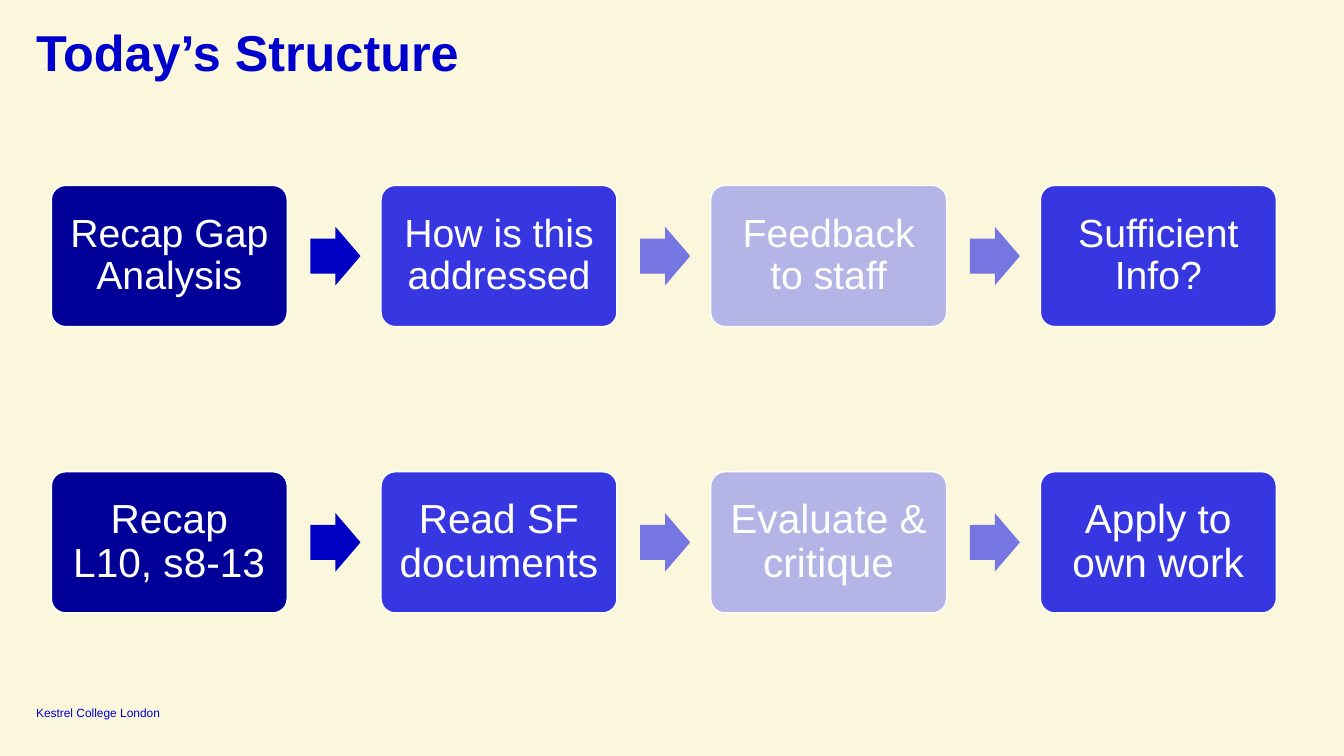
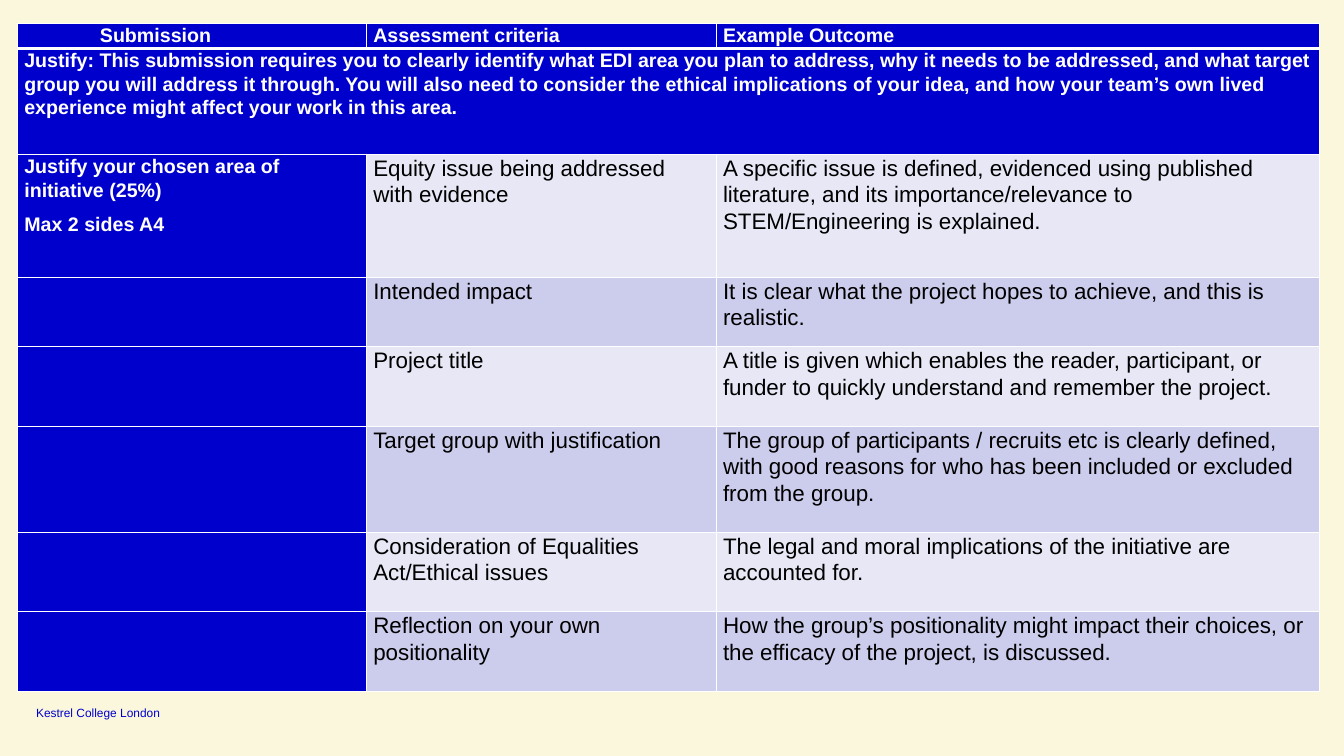
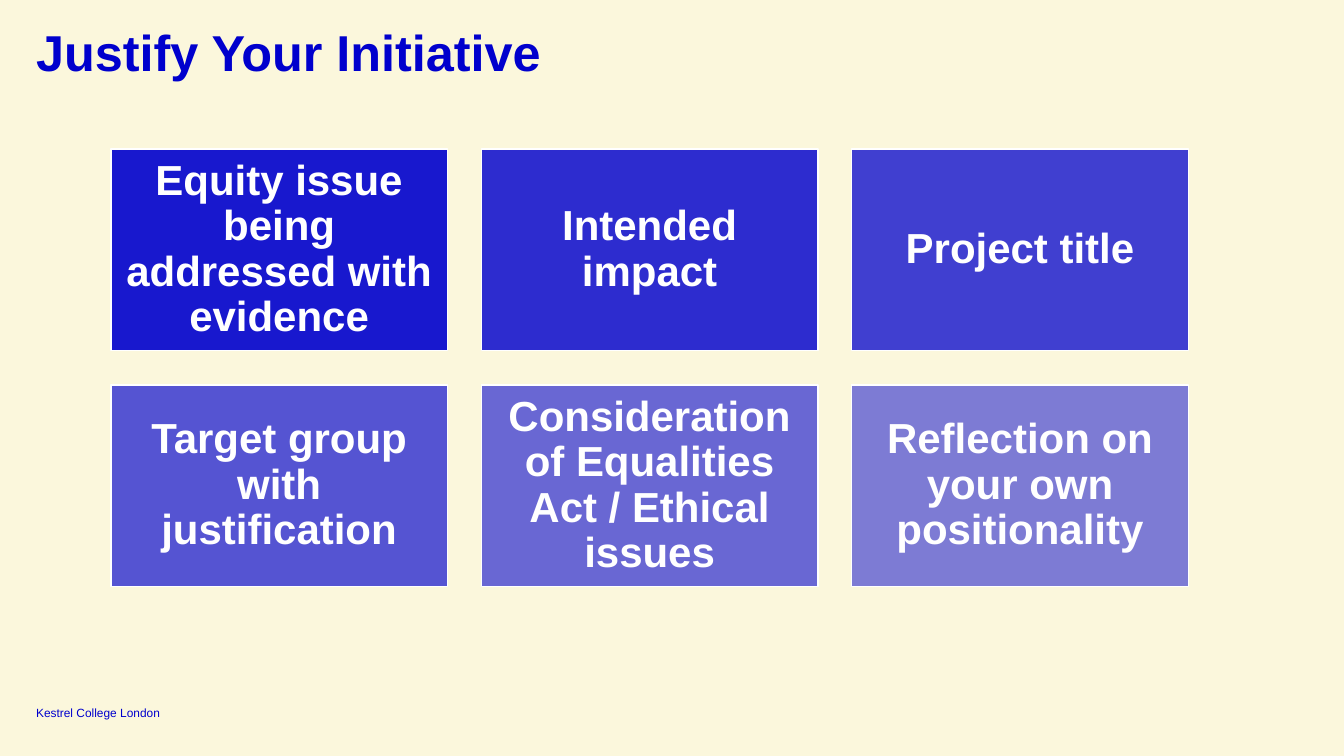
from pptx import Presentation
from pptx.dml.color import RGBColor
from pptx.enum.shapes import MSO_SHAPE
from pptx.enum.text import MSO_ANCHOR, PP_ALIGN
from pptx.oxml.ns import qn
from pptx.util import Pt
from lxml.etree import SubElement

HEX = {
    "cream": "FBF7DC", "blue": "0000CD", "white": "FFFFFF", "black": "000000",
    "navy": "000098", "royal": "3737E2", "lilac": "B4B4E6",
    "deep": "0000C4", "soft": "7676E3", "pale": "E7E7F6", "band": "CCCCED",
}
COLOR = {name: RGBColor.from_string(code) for name, code in HEX.items()}


def write(frame, text, size=14, color="white", bold=False, align=PP_ALIGN.LEFT,
          line=1.0, after=0, indent=0):
    """Fill a text frame, one paragraph for each line of text."""
    for i, part in enumerate(text.split("\n")):
        para = frame.add_paragraph() if i else frame.paragraphs[0]
        para.alignment, para.line_spacing, para.space_after = align, line, Pt(after)
        if indent:
            para._p.get_or_add_pPr().set("marL", str(Pt(indent)))
        run = para.add_run()
        run.text = part
        font = run.font
        font.name, font.size, font.bold = "Arial", Pt(size), bold
        font.color.rgb = COLOR[color]


def draw(slide, kind, left, top, width, height, fill=None, text="", inset=0,
         anchor=MSO_ANCHOR.MIDDLE, edge=True, alpha=100, **style):
    """Add a shape, or a text box when kind is None, with its text."""
    place = Pt(left), Pt(top), Pt(width), Pt(height)
    if kind is None:
        shape = slide.shapes.add_textbox(*place)
    else:
        shape = slide.shapes.add_shape(kind, *place)
        shape.shadow.inherit = False
        shape.fill.solid()
        shape.fill.fore_color.rgb = COLOR[fill]
        if alpha < 100:
            tint = shape._element.spPr.find(qn("a:solidFill"))[0]
            SubElement(tint, qn("a:alpha"), val=str(alpha * 1000))
        if edge:
            shape.line.color.rgb, shape.line.width = COLOR["white"], Pt(1)
        else:
            shape.line.fill.background()
    if text:
        frame = shape.text_frame
        frame.word_wrap, frame.vertical_anchor = True, anchor
        frame.margin_left = frame.margin_right = Pt(inset)
        frame.margin_top = frame.margin_bottom = Pt(inset)
        write(frame, text, **style)
    return shape


deck = Presentation()
deck.slide_width, deck.slide_height = Pt(960), Pt(540)
back = deck.slide_master.background.fill
back.solid()
back.fore_color.rgb = COLOR["cream"]

# Titles and footers
pages = []
for title in ("Today’s Structure", "", "Justify Your Initiative"):
    page = deck.slides.add_slide(deck.slide_layouts[6])
    draw(page, None, 25.8, 503, 160, 11, text="Kestrel College London",
         anchor=MSO_ANCHOR.BOTTOM, size=8.5, color="blue")
    if title:
        draw(page, None, 25.8, 20, 908.6, 29.5, text=title, anchor=MSO_ANCHOR.TOP,
             size=36, color="blue", bold=True, line=0.9)
    pages.append(page)
plan, grid, tiles = pages

# Two rows of steps
flows = [
    (132.5, 28, ["Recap Gap Analysis", "How is this addressed",
                 "Feedback to staff", "Sufficient Info?"]),
    (337, 29, ["Recap L10, s8-13", "Read SF documents",
               "Evaluate & critique", "Apply to own work"]),
]
fills = ["navy", "royal", "lilac", "royal"]
heads = ["deep", "soft", "soft"]
for top, size, steps in flows:
    for i, step in enumerate(steps):
        left = 36.7 + 235.5 * i
        box = draw(plan, MSO_SHAPE.ROUNDED_RECTANGLE, left, top, 168.5, 100.8,
                   fills[i], step, inset=8, size=size,
                   align=PP_ALIGN.CENTER, line=0.9)
        box.adjustments[0] = 0.1
        if i < len(heads):
            arrow = draw(plan, MSO_SHAPE.RIGHT_ARROW, left + 185, top + 29.5,
                         35.8, 41.8, heads[i], edge=False)
            arrow.adjustments[0] = 0.6

# Assessment table
rows = [
    (18, "Submission", "Assessment criteria", "Example Outcome"),
    (75.6, "Justify: This submission requires you to clearly identify what EDI area "
     "you plan to address, why it needs to be addressed, and what target group you "
     "will address it through. You will also need to consider the ethical "
     "implications of your idea, and how your team’s own lived experience might "
     "affect your work in this area.", "", ""),
    (87.8, "Justify your chosen area of initiative (25%)\nMax 2 sides A4",
     "Equity issue being addressed with evidence",
     "A specific issue is defined, evidenced using published literature, and its "
     "importance/relevance to STEM/Engineering is explained."),
    (49.8, "", "Intended impact",
     "It is clear what the project hopes to achieve, and this is realistic."),
    (56.8, "", "Project title",
     "A title is given which enables the reader, participant, or funder to quickly "
     "understand and remember the project."),
    (75.6, "", "Target group with justification",
     "The group of participants / recruits etc is clearly defined, with good reasons "
     "for who has been included or excluded from the group."),
    (56.8, "", "Consideration of Equalities Act/Ethical issues",
     "The legal and moral implications of the initiative are accounted for."),
    (56.8, "", "Reflection on your own positionality",
     "How the group’s positionality might impact their choices, or the efficacy of "
     "the project, is discussed."),
]
widths = [249.3, 249.8, 430.6]
table = grid.shapes.add_table(len(rows), len(widths), Pt(12.7), Pt(16.6),
                              Pt(sum(widths)), Pt(sum(r[0] for r in rows))).table
table.first_row = table.horz_banding = False
for col, width in zip(table.columns, widths):
    col.width = Pt(width)
for r, (height, *texts) in enumerate(rows):
    table.rows[r].height = Pt(height)
    for c, text in enumerate(texts):
        cell = table.cell(r, c)
        cell.margin_left = cell.margin_right = Pt(4.7)
        cell.margin_top = cell.margin_bottom = 0
        for side in "LRTB":
            thick = 3 if (r, side) in ((0, "B"), (1, "T")) else 1
            edge = SubElement(cell._tc.get_or_add_tcPr(), qn("a:ln" + side),
                              w=str(Pt(thick)))
            paint = SubElement(edge, qn("a:solidFill"))
            SubElement(paint, qn("a:srgbClr"), val=HEX["white"])
        head = r < 2 or c == 0
        cell.fill.solid()
        cell.fill.fore_color.rgb = COLOR["blue" if head else ("pale", "band")[r % 2]]
        if text:
            write(cell.text_frame, text, size=14 if head else 16,
                  color="white" if head else "black", bold=head, line=1.07,
                  after=8, indent=0 if r or c else 54)
table.cell(1, 0).merge(table.cell(1, 2))

# Criteria tiles, fading one step at a time
topics = ["Equity issue being addressed with evidence", "Intended impact",
          "Project title", "Target group with justification",
          "Consideration of Equalities Act / Ethical issues",
          "Reflection on your own positionality"]
for i, topic in enumerate(topics):
    row, col = divmod(i, 3)
    draw(tiles, MSO_SHAPE.RECTANGLE, 79.2 + 264.6 * col, 106.5 + 168.5 * row,
         240.5, 144, "blue", topic, inset=8.6, alpha=90 - 8 * i, size=30,
         bold=True, align=PP_ALIGN.CENTER, line=0.9)

deck.save("out.pptx")
